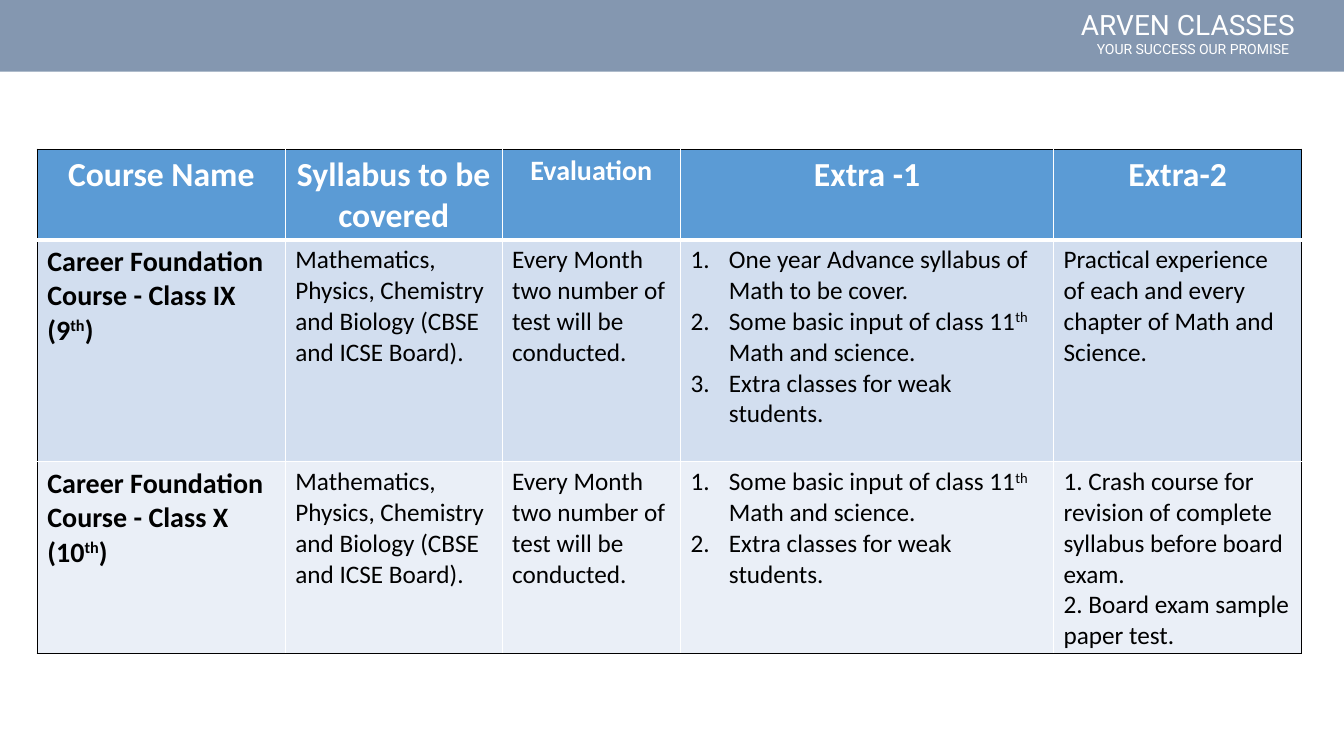
from dataclasses import dataclass
from lxml.etree import SubElement
from pptx import Presentation
from pptx.dml.color import RGBColor
from pptx.enum.shapes import MSO_SHAPE
from pptx.enum.text import MSO_ANCHOR, PP_ALIGN
from pptx.oxml.ns import qn
from pptx.util import Inches, Pt

BRAND = "ARVEN CLASSES"
SLOGAN = "YOUR SUCCESS OUR PROMISE"

# "^" encloses superscript text; a tuple holds paragraphs, a list is numbered.
SYLLABUS = "Mathematics, Physics, Chemistry and Biology (CBSE and ICSE Board)."
EVALUATION = "Every Month two number of test will be conducted."
SHARED_EXTRAS = [
    "Some basic input of class 11^th^ Math and science.",
    "Extra classes for weak students.",
]
ROWS = [
    ["Course Name", "Syllabus to be covered", "Evaluation", "Extra -1", "Extra-2"],
    ["Career Foundation Course - Class IX (9^th^)", SYLLABUS, EVALUATION,
     ["One year Advance syllabus of Math to be cover."] + SHARED_EXTRAS,
     "Practical experience of each and every chapter of Math and Science."],
    ["Career Foundation Course - Class X (10^th^)", SYLLABUS, EVALUATION,
     SHARED_EXTRAS,
     ("1. Crash course for revision of complete syllabus before board exam.",
      "2. Board exam sample paper test.")],
]
COLUMN_WIDTHS = [2.46, 2.15, 1.77, 3.7, 2.46]
ROW_HEIGHTS = [0.9, 2.2, 1.9]
TABLE_LEFT, TABLE_TOP = 0.37, 1.48
SLIDE_WIDTH, SLIDE_HEIGHT = 13.33, 7.5
BANNER_HEIGHT = 0.71
NUMBER_INDENT = 0.38


@dataclass(frozen=True)
class Theme:
    banner: str = "8497B0"
    row_fills: tuple = ("5B9BD5", "D2DEEF", "EAEFF7")
    light: str = "FFFFFF"
    dark: str = "000000"
    brand_font: str = "Roboto"
    table_font: str = "Calibri"
    brand_size: int = 20
    slogan_size: int = 10
    header_size: int = 24
    course_size: int = 20
    body_size: int = 18
    thin: int = 1
    thick: int = 3


THEME = Theme()


def style(font, name, size, color, bold=False):
    font.name, font.size, font.bold = name, Pt(size), bold
    font.color.rgb = RGBColor.from_string(color)


def place_banner_line(shape, text, left, top, width, height, size):
    shape.left, shape.top = Inches(left), Inches(top)
    shape.width, shape.height = Inches(width), Inches(height)
    frame = shape.text_frame
    frame.text = text
    frame.word_wrap = True
    frame.vertical_anchor = MSO_ANCHOR.TOP
    paragraph = frame.paragraphs[0]
    paragraph.alignment = PP_ALIGN.LEFT
    paragraph.line_spacing = 1.0
    paragraph.space_before = Pt(0)
    style(paragraph.runs[0].font, THEME.brand_font, size, THEME.light)


def add_banner(slide):
    banner = slide.shapes.add_shape(
        MSO_SHAPE.RECTANGLE, 0, 0, Inches(SLIDE_WIDTH), Inches(BANNER_HEIGHT))
    banner.shadow.inherit = False
    banner.fill.solid()
    banner.fill.fore_color.rgb = RGBColor.from_string(THEME.banner)
    banner.line.fill.background()
    # Send the banner behind the title placeholder.
    banner._element.getparent().insert(2, banner._element)
    place_banner_line(slide.shapes.title, BRAND, 10.62, 0.02, 2.7, 0.44, THEME.brand_size)
    slogan = slide.shapes.add_textbox(0, 0, 0, 0)
    place_banner_line(slogan, SLOGAN, 10.78, 0.35, 2.5, 0.27, THEME.slogan_size)


def set_borders(cell, row, column):
    """Black outside edges, white inside, and a thick rule below the header."""
    last_row, last_column = len(ROWS) - 1, len(COLUMN_WIDTHS) - 1
    edges = {
        "a:lnL": (column == 0, False),
        "a:lnR": (column == last_column, False),
        "a:lnT": (row == 0, row == 1),
        "a:lnB": (row == last_row, row == 0),
    }
    properties = cell._tc.get_or_add_tcPr()
    for tag, (outer, header_rule) in edges.items():
        width = THEME.thick if header_rule else THEME.thin
        line = SubElement(properties, qn(tag), w=str(Pt(width)))
        fill = SubElement(line, qn("a:solidFill"))
        SubElement(fill, qn("a:srgbClr"), val=THEME.dark if outer else THEME.light)


def number_paragraph(paragraph):
    properties = paragraph._p.get_or_add_pPr()
    indent = Inches(NUMBER_INDENT)
    properties.set("marL", str(indent))
    properties.set("indent", str(-indent))
    SubElement(properties, qn("a:buFont"), typeface="+mj-lt")
    SubElement(properties, qn("a:buAutoNum"), type="arabicPeriod")


def text_style(row, column):
    """Return size, colour and boldness for a cell."""
    if row == 0:
        size = THEME.course_size if column == 2 else THEME.header_size
        return size, THEME.light, True
    if column == 0:
        return THEME.course_size, THEME.dark, True
    return THEME.body_size, THEME.dark, False


def fill_cell(cell, content, row, column):
    set_borders(cell, row, column)
    cell.fill.solid()
    cell.fill.fore_color.rgb = RGBColor.from_string(THEME.row_fills[row])
    lines = (content,) if isinstance(content, str) else content
    size, color, bold = text_style(row, column)
    frame = cell.text_frame
    for index, line in enumerate(lines):
        paragraph = frame.add_paragraph() if index else frame.paragraphs[0]
        if isinstance(content, list):
            number_paragraph(paragraph)
        paragraph.alignment = PP_ALIGN.CENTER if row == 0 else PP_ALIGN.LEFT
        for part, text in enumerate(line.split("^")):
            run = paragraph.add_run()
            run.text = text
            style(run.font, THEME.table_font, size, color, bold)
            if part % 2:
                run._r.get_or_add_rPr().set("baseline", "30000")


def add_course_table(slide):
    table = slide.shapes.add_table(
        len(ROWS), len(COLUMN_WIDTHS), Inches(TABLE_LEFT), Inches(TABLE_TOP),
        Inches(sum(COLUMN_WIDTHS)), Inches(sum(ROW_HEIGHTS))).table
    for column, width in zip(table.columns, COLUMN_WIDTHS):
        column.width = Inches(width)
    for row, height in zip(table.rows, ROW_HEIGHTS):
        row.height = Inches(height)
    for row, contents in enumerate(ROWS):
        for column, content in enumerate(contents):
            fill_cell(table.cell(row, column), content, row, column)


def main():
    presentation = Presentation()
    presentation.slide_width = Inches(SLIDE_WIDTH)
    presentation.slide_height = Inches(SLIDE_HEIGHT)
    slide = presentation.slides.add_slide(presentation.slide_layouts[5])
    add_banner(slide)
    add_course_table(slide)
    presentation.save("out.pptx")


if __name__ == "__main__":
    main()
